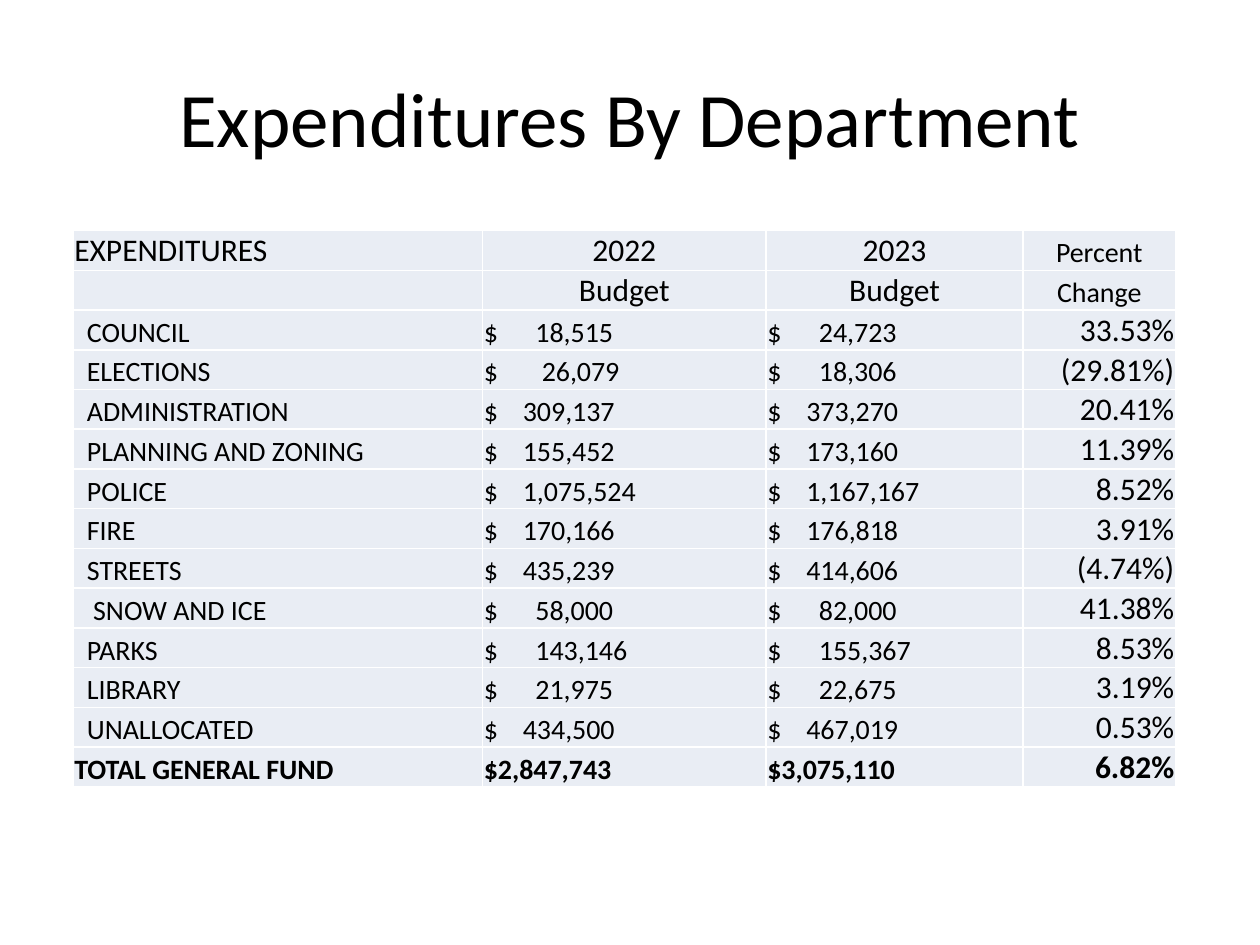
from lxml.etree import SubElement
from pptx import Presentation
from pptx.dml.color import RGBColor
from pptx.enum.text import MSO_ANCHOR, PP_ALIGN
from pptx.oxml.ns import qn
from pptx.util import Inches, Pt

COLORS = {"text": "000000", "cell": "E9EDF4", "border": "FFFFFF"}
FONT = "Calibri"
COLUMN_WIDTHS = [3.25, 2.25, 2.04, 1.21]
ROW_HEIGHT = 0.31
INDENT = 0.1
NEAR, FAR = 0.31, 0.41

HEADERS = [
    ("EXPENDITURES", "2022", "2023", "Percent"),
    ("", "Budget", "Budget", "Change"),
]
DEPARTMENTS = [
    ("COUNCIL", INDENT, "18,515", FAR, "24,723", FAR, "33.53%"),
    ("ELECTIONS", INDENT, "26,079", 0.46, "18,306", FAR, "(29.81%)"),
    ("ADMINISTRATION", INDENT, "309,137", NEAR, "373,270", NEAR, "20.41%"),
    ("PLANNING AND ZONING", INDENT, "155,452", NEAR, "173,160", NEAR, "11.39%"),
    ("POLICE", INDENT, "1,075,524", NEAR, "1,167,167", NEAR, "8.52%"),
    ("FIRE", INDENT, "170,166", NEAR, "176,818", NEAR, "3.91%"),
    ("STREETS", INDENT, "435,239", NEAR, "414,606", NEAR, "(4.74%)"),
    ("SNOW AND ICE", 0.15, "58,000", FAR, "82,000", FAR, "41.38%"),
    ("PARKS", INDENT, "143,146", FAR, "155,367", FAR, "8.53%"),
    ("LIBRARY", INDENT, "21,975", FAR, "22,675", FAR, "3.19%"),
    ("UNALLOCATED", INDENT, "434,500", NEAR, "467,019", NEAR, "0.53%"),
]
TOTAL = ("TOTAL GENERAL FUND", "$2,847,743", "$3,075,110", "6.82%")


def format_runs(p, size, bold=False):
    for r in p.runs:
        r.font.name = FONT
        r.font.size = Pt(size)
        r.font.bold = bold
        r.font.color.rgb = RGBColor.from_string(COLORS["text"])


def add_title(s, text):
    title = s.shapes.title
    title.left, title.top = Inches(0.5), Inches(0.3)
    title.width, title.height = Inches(9), Inches(1.25)
    tf = title.text_frame
    tf.text = text
    tf.vertical_anchor = MSO_ANCHOR.MIDDLE
    p = tf.paragraphs[0]
    p.alignment = PP_ALIGN.CENTER
    format_runs(p, 44)


def set_borders(cell):
    tcPr = cell._tc.get_or_add_tcPr()
    for side in ("lnL", "lnR", "lnT", "lnB"):
        ln = SubElement(tcPr, qn(f"a:{side}"), w=str(Pt(1)))
        fill = SubElement(ln, qn("a:solidFill"))
        SubElement(fill, qn("a:srgbClr"), val=COLORS["border"])


def style_cell(cell):
    set_borders(cell)
    cell.fill.solid()
    cell.fill.fore_color.rgb = RGBColor.from_string(COLORS["cell"])
    cell.vertical_anchor = MSO_ANCHOR.BOTTOM
    cell.margin_left = cell.margin_right = cell.margin_top = Inches(0.01)
    cell.margin_bottom = 0


def write_cell(cell, text, size, align=PP_ALIGN.LEFT, bold=False, indent=0, tab=0):
    p = cell.text_frame.paragraphs[0]
    p.text = text
    p.alignment = align
    pPr = p._p.get_or_add_pPr()
    if indent:
        pPr.set("marL", str(Inches(indent)))
        pPr.set("indent", "0")
    if tab:
        tabs = SubElement(pPr, qn("a:tabLst"))
        SubElement(tabs, qn("a:tab"), pos=str(Inches(tab)), algn="l")
    format_runs(p, size, bold)


def add_table(s):
    row_count = len(HEADERS) + len(DEPARTMENTS) + 1
    frame = s.shapes.add_table(
        row_count, len(COLUMN_WIDTHS), Inches(0.58), Inches(1.83),
        Inches(sum(COLUMN_WIDTHS)), Inches(ROW_HEIGHT * row_count))
    table = frame.table
    for column, width in zip(table.columns, COLUMN_WIDTHS):
        column.width = Inches(width)
    for row in table.rows:
        row.height = Inches(ROW_HEIGHT)
        for cell in row.cells:
            style_cell(cell)
    return table


def fill_table(table):
    for i, (label, *headings, change) in enumerate(HEADERS):
        if label:
            write_cell(table.cell(i, 0), label, 18)
        for j, heading in enumerate(headings, 1):
            write_cell(table.cell(i, j), heading, 18, PP_ALIGN.CENTER)
        write_cell(table.cell(i, 3), change, 16, PP_ALIGN.CENTER)

    for i, department in enumerate(DEPARTMENTS, len(HEADERS)):
        name, indent, old, old_tab, new, new_tab, change = department
        write_cell(table.cell(i, 0), name, 16, indent=indent)
        write_cell(table.cell(i, 1), f"$\t{old}", 16, tab=old_tab)
        write_cell(table.cell(i, 2), f"$\t{new}", 16, tab=new_tab)
        write_cell(table.cell(i, 3), change, 18, PP_ALIGN.RIGHT)

    last = len(table.rows) - 1
    for j, text in enumerate(TOTAL[:-1]):
        write_cell(table.cell(last, j), text, 16, bold=True)
    write_cell(table.cell(last, 3), TOTAL[-1], 18, PP_ALIGN.RIGHT, bold=True)


def main():
    prs = Presentation()
    prs.slide_width, prs.slide_height = Inches(10), Inches(7.5)
    s = prs.slides.add_slide(prs.slide_layouts[5])
    add_title(s, "Expenditures By Department")
    fill_table(add_table(s))
    prs.save("out.pptx")


if __name__ == "__main__":
    main()
